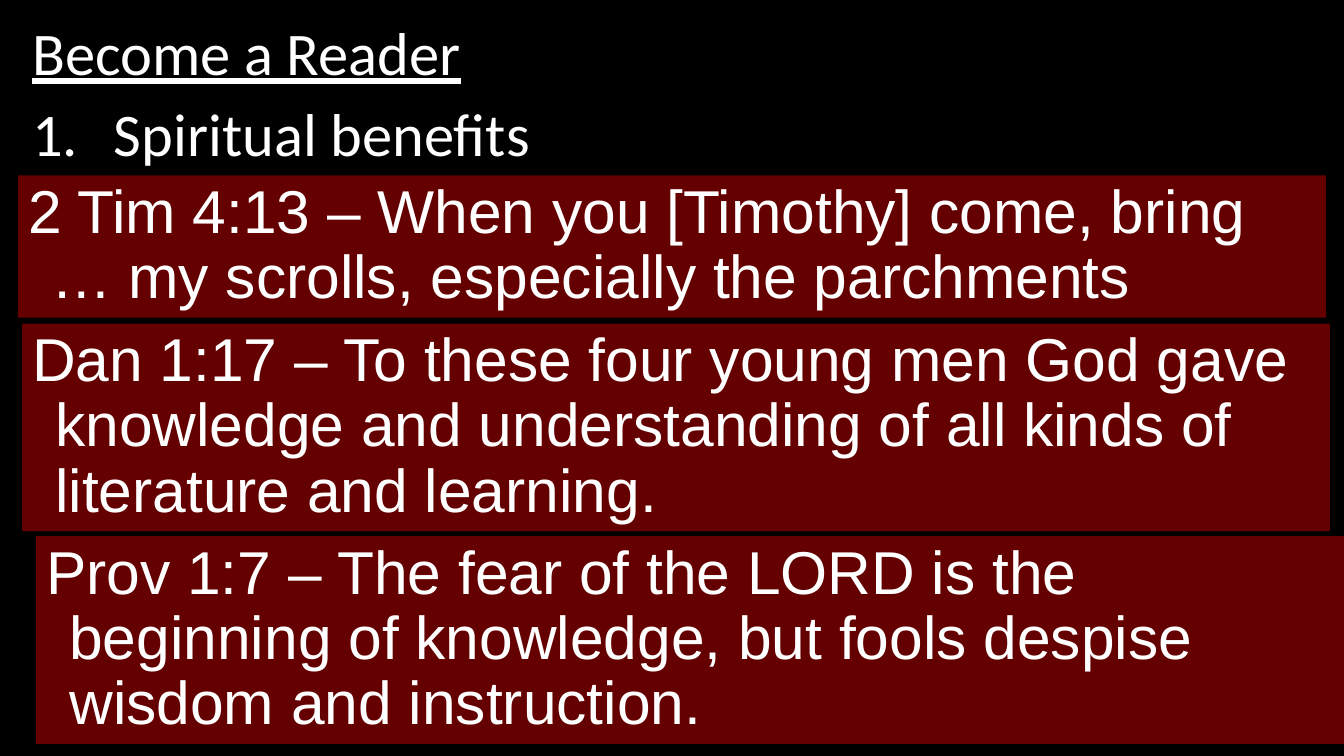
from lxml import etree
from pptx import Presentation
from pptx.dml.color import RGBColor
from pptx.enum.shapes import MSO_SHAPE as Shape
from pptx.enum.text import MSO_ANCHOR as Anchor, MSO_AUTO_SIZE as AutoSize, PP_ALIGN as Align
from pptx.oxml.ns import qn
from pptx.util import Inches, Pt

WHITE, BLACK, DARK_RED = "FFFFFF", "000000", "640000"


def color(hex_value):
    return RGBColor.from_string(hex_value)


def write(paragraph, text, font, hanging, spacing):
    """Add one run to a paragraph with a hanging indent; return the run."""
    paragraph.alignment = Align.LEFT
    paragraph.line_spacing = spacing
    properties = paragraph._p.get_or_add_pPr()
    properties.set("marL", str(Inches(hanging)))
    properties.set("indent", str(-Inches(hanging)))
    run = paragraph.add_run()
    run.text = text
    run.font.name = font
    run.font.size = Pt(43.2)
    run.font.color.rgb = color(WHITE)
    return run


prs = Presentation()
prs.slide_width, prs.slide_height = Inches(13.33), Inches(7.5)
slide = prs.slides.add_slide(prs.slide_layouts[1])
slide.background.fill.solid()
slide.background.fill.fore_color.rgb = color(BLACK)

# The slide has an outline but no title
empty_title = slide.shapes.title._element
empty_title.getparent().remove(empty_title)

# Outline: underlined heading and numbered point
outline = slide.placeholders[1]
outline.left, outline.top = Inches(0.22), Inches(0.15)
outline.width, outline.height = Inches(12.89), Inches(6.35)
outline_text = outline.text_frame
outline_text.auto_size = AutoSize.NONE
outline_text.vertical_anchor = Anchor.TOP

heading = outline_text.paragraphs[0]
write(heading, "Become a Reader", "Calibri", 0.45, 0.95).font.underline = True
point = outline_text.add_paragraph()
write(point, "Spiritual benefits", "Calibri", 0.81, 0.95)
for line in (heading, point):
    line.space_before = Pt(8.64)
etree.SubElement(heading._p.pPr, qn("a:buNone"))
etree.SubElement(point._p.pPr, qn("a:buFont"), typeface="+mj-lt")
etree.SubElement(point._p.pPr, qn("a:buAutoNum"), type="arabicPeriod")

# Scripture panels: left, top, height, verse
verses = [
    (0.18, 1.74, 1.41, "2 Tim 4:13 – When you [Timothy] come, bring … my scrolls, "
                       "especially the parchments"),
    (0.22, 3.21, 2.06, "Dan 1:17 – To these four young men God gave knowledge and "
                       "understanding of all kinds of literature and learning."),
    (0.36, 5.32, 2.06, "Prov 1:7 – The fear of the LORD is the beginning of knowledge, "
                       "but fools despise wisdom and instruction."),
]
for left, top, height, verse in verses:
    panel = slide.shapes.add_shape(Shape.ROUNDED_RECTANGLE, Inches(left), Inches(top),
                                   Inches(12.97), Inches(height))
    panel.adjustments[0] = 0
    panel.shadow.inherit = False
    panel.fill.solid()
    panel.fill.fore_color.rgb = color(DARK_RED)
    panel.line.fill.background()
    panel.text_frame.word_wrap = True
    panel.text_frame.auto_size = AutoSize.SHAPE_TO_FIT_TEXT
    write(panel.text_frame.paragraphs[0], verse, "Arial", 0.23, 0.9)

prs.save("out.pptx")
